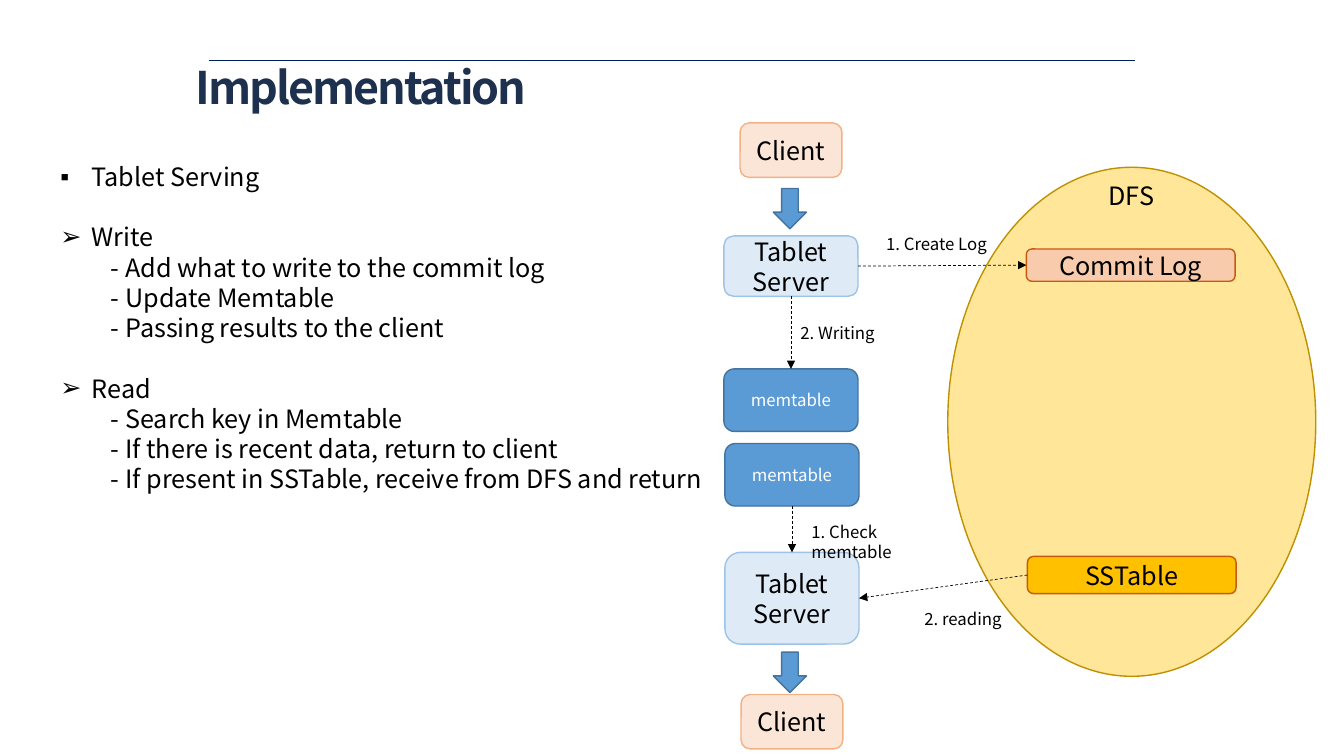
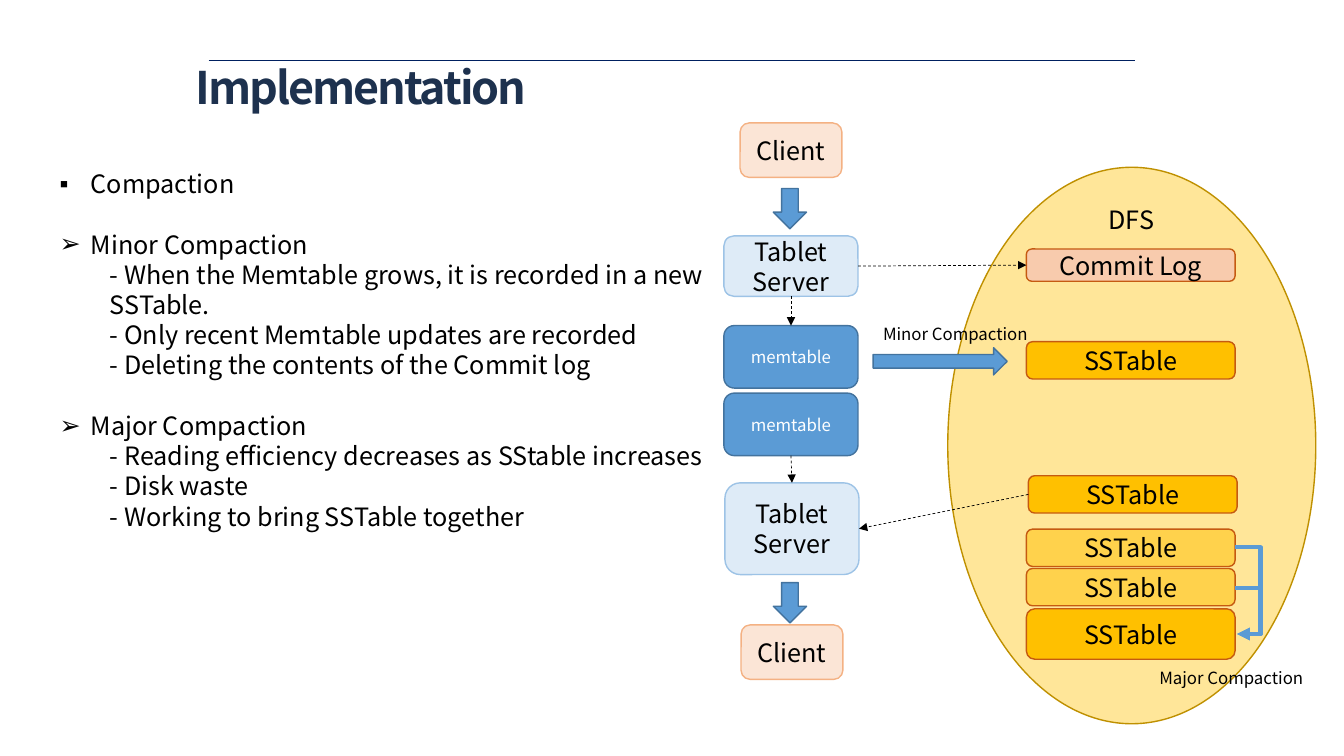
import dataclasses

import lxml.etree
import pptx
import pptx.dml.color
import pptx.enum.dml
import pptx.enum.shapes
import pptx.enum.text
import pptx.oxml.ns
import pptx.shapes.autoshape
import pptx.shapes.connector
import pptx.slide
import pptx.text.text
import pptx.util

Inches = pptx.util.Inches
RGBColor = pptx.dml.color.RGBColor
Shapes = pptx.enum.shapes.MSO_SHAPE
Connectors = pptx.enum.shapes.MSO_CONNECTOR
Align = pptx.enum.text.PP_ALIGN
Anchor = pptx.enum.text.MSO_ANCHOR

FONT = "Noto Sans CJK KR"
LINE_HEIGHT = 1.2
BLACK = RGBColor(0x00, 0x00, 0x00)
WHITE = RGBColor(0xFF, 0xFF, 0xFF)
NAVY = RGBColor(0x1D, 0x31, 0x4E)
RULE_BLUE = RGBColor(0x00, 0x20, 0x60)
BLUE = RGBColor(0x5B, 0x9B, 0xD5)
DARK_BLUE = RGBColor(0x43, 0x73, 0x9E)
PALE_BLUE = RGBColor(0xDE, 0xEB, 0xF7)
LIGHT_BLUE = RGBColor(0x9D, 0xC3, 0xE6)
PALE_ORANGE = RGBColor(0xFB, 0xE5, 0xD6)
LIGHT_ORANGE = RGBColor(0xF4, 0xB1, 0x83)
SALMON = RGBColor(0xF8, 0xCB, 0xAD)
RUST = RGBColor(0xC5, 0x5A, 0x11)
AMBER = RGBColor(0xFF, 0xC0, 0x00)
PALE_YELLOW = RGBColor(0xFF, 0xE6, 0x99)
OCHRE = RGBColor(0xBF, 0x90, 0x00)

TOP, LEFT, BOTTOM, RIGHT = range(4)  # connection sites of a box


@dataclasses.dataclass(frozen=True)
class Style:
    fill: RGBColor
    line: RGBColor
    text: str = ""
    text_color: RGBColor = BLACK
    size: float = 18
    opacity: int = 100
    shape: Shapes = Shapes.ROUNDED_RECTANGLE


CLIENT = Style(PALE_ORANGE, LIGHT_ORANGE, "Client")
SERVER = Style(PALE_BLUE, LIGHT_BLUE, "Tablet Server")
MEMTABLE = Style(BLUE, DARK_BLUE, "memtable", WHITE, 12)
COMMIT_LOG = Style(SALMON, RUST, "Commit Log")
SSTABLE = Style(AMBER, RUST, "SSTable")
OLD_SSTABLE = dataclasses.replace(SSTABLE, opacity=50)
FILE_SYSTEM = Style(PALE_YELLOW, OCHRE, shape=Shapes.OVAL)
DOWN_ARROW = Style(BLUE, DARK_BLUE, shape=Shapes.DOWN_ARROW)
RIGHT_ARROW = Style(BLUE, DARK_BLUE, shape=Shapes.RIGHT_ARROW)


@dataclasses.dataclass(frozen=True)
class Box:
    name: str
    style: Style
    left: float
    top: float
    width: float
    height: float


@dataclasses.dataclass(frozen=True)
class Link:
    """A dashed arrow between connection sites of two named boxes."""
    start: str
    start_site: int
    end: str
    end_site: int


@dataclasses.dataclass(frozen=True)
class Label:
    text: str
    left: float
    top: float
    width: float
    size: float = 12
    align: Align = Align.LEFT


@dataclasses.dataclass(frozen=True)
class Section:
    bullet: str
    heading: str
    items: tuple[str, ...] = ()


@dataclasses.dataclass(frozen=True)
class Page:
    body: tuple[float, float, float, float]
    sections: tuple[Section, ...]
    boxes: tuple[Box, ...]
    labels: tuple[Label, ...]
    elbow_tops: tuple[float, ...] = ()


LINKS = (
    Link("writer", RIGHT, "commit log", LEFT),
    Link("writer", BOTTOM, "written memtable", TOP),
    Link("read memtable", BOTTOM, "reader", TOP),
    Link("stored table", LEFT, "reader", RIGHT),
)
WRITE_PATH = (
    Box("writing client", CLIENT, 7.34, 1.22, 1.01, 0.54),
    Box("request", DOWN_ARROW, 7.67, 1.87, 0.33, 0.4),
    Box("writer", SERVER, 7.18, 2.34, 1.33, 0.6),
    Box("commit log", COMMIT_LOG, 10.18, 2.47, 2.07, 0.32),
)


def read_path(left: float, top: float) -> tuple[Box, ...]:
    """The reading server, its result arrow and the client below it."""
    return (
        Box("reader", SERVER, left, top, 1.33, 0.91),
        Box("result", DOWN_ARROW, left + 0.48, top + 0.99, 0.33, 0.4),
        Box("reading client", CLIENT, left + 0.16, top + 1.41, 1.01, 0.54),
    )


PAGES = (
    Page(
        (0.5, 1.55, 6.6, 4.34),
        (
            Section("▪", "Tablet Serving"),
            Section("➢", "Write", (
                "- Add what to write to the commit log",
                "- Update Memtable",
                "- Passing results to the client")),
            Section("➢", "Read", (
                "- Search key in Memtable",
                "- If there is recent data, return to client",
                "- If present in SSTable, receive from DFS and return")),
        ),
        (
            Box("file system", FILE_SYSTEM, 9.4, 1.66, 3.65, 5.05),
            *WRITE_PATH,
            Box("written memtable", MEMTABLE, 7.18, 3.66, 1.33, 0.62),
            Box("read memtable", MEMTABLE, 7.19, 4.4, 1.33, 0.62),
            *read_path(7.19, 5.48),
            Box("stored table", SSTABLE, 10.19, 5.52, 2.07, 0.37),
        ),
        (
            Label("DFS", 10.72, 1.74, 1, 18, Align.CENTER),
            Label("1. Create Log", 8.69, 2.27, 1.4),
            Label("2. Writing", 7.84, 3.15, 1.2),
            Label("1. Check memtable", 7.95, 5.13, 1.2),
            Label("2. reading", 9.07, 5.99, 1.2),
        ),
    ),
    Page(
        (0.49, 1.62, 7.1, 4.34),
        (
            Section("▪", "Compaction"),
            Section("➢", "Minor Compaction", (
                "- When the Memtable grows, it is recorded in a new SSTable.",
                "- Only recent Memtable updates are recorded",
                "- Deleting the contents of the Commit log")),
            Section("➢", "Major Compaction", (
                "- Reading efficiency decreases as SStable increases",
                "- Disk waste",
                "- Working to bring SSTable together")),
        ),
        (
            Box("file system", FILE_SYSTEM, 9.4, 1.66, 3.65, 5.52),
            *WRITE_PATH,
            Box("written memtable", MEMTABLE, 7.18, 3.23, 1.33, 0.62),
            Box("read memtable", MEMTABLE, 7.18, 3.9, 1.33, 0.62),
            *read_path(7.19, 4.79),
            Box("minor compaction", RIGHT_ARROW, 8.66, 3.45, 1.33, 0.27),
            Box("new table", SSTABLE, 10.18, 3.39, 2.07, 0.37),
            Box("stored table", SSTABLE, 10.2, 4.72, 2.07, 0.37),
            Box("first old table", OLD_SSTABLE, 10.18, 5.25, 2.07, 0.37),
            Box("second old table", OLD_SSTABLE, 10.18, 5.64, 2.07, 0.37),
            Box("merged table", SSTABLE, 10.18, 6.04, 2.07, 0.5),
        ),
        (
            Label("DFS", 10.72, 1.98, 1, 18, Align.CENTER),
            Label("Minor Compaction", 8.66, 3.16, 1.8),
            Label("Major Compaction", 11.4, 6.58, 1.8),
        ),
        (5.83, 5.43),
    ),
)


def add_child(parent: lxml.etree._Element, tag: str, **attributes: str) -> lxml.etree._Element:
    return lxml.etree.SubElement(parent, pptx.oxml.ns.qn(tag), attributes)


def place(shape: pptx.shapes.autoshape.Shape, left: float, top: float, width: float, height: float) -> None:
    shape.left, shape.top = Inches(left), Inches(top)
    shape.width, shape.height = Inches(width), Inches(height)


def write(paragraph: pptx.text.text._Paragraph, text: str, size: float,
          color: RGBColor = BLACK, align: Align = Align.LEFT) -> pptx.text.text._Run:
    paragraph.alignment = align
    paragraph.line_spacing = pptx.util.Pt(size * LINE_HEIGHT)
    run = paragraph.add_run()
    run.text = text
    run.font.name = FONT
    run.font.size = pptx.util.Pt(size)
    run.font.color.rgb = color
    return run


def add_line(slide: pptx.slide.Slide, kind: Connectors, start: tuple[float, float], end: tuple[float, float],
             color: RGBColor, width: float, arrow: bool = True) -> pptx.shapes.connector.Connector:
    connector = slide.shapes.add_connector(kind, *map(Inches, start + end))
    connector.line.color.rgb = color
    connector.line.width = pptx.util.Pt(width)
    if arrow:
        add_child(connector.line._get_or_add_ln(), "a:tailEnd", type="triangle")
    add_child(connector._element.spPr, "a:effectLst")
    return connector


def add_title(slide: pptx.slide.Slide, text: str) -> None:
    add_line(slide, Connectors.STRAIGHT, (2.07, 0.6), (11.26, 0.6), RULE_BLUE, 0.25, arrow=False)
    title = slide.shapes.title
    place(title, 1.94, 0.6, 9.28, 0.94)
    frame = title.text_frame
    frame.auto_size = pptx.enum.text.MSO_AUTO_SIZE.NONE
    frame.vertical_anchor = Anchor.TOP
    frame.margin_left = frame.margin_right = 0
    run = write(frame.paragraphs[0], text, 32, NAVY)
    run.font.bold = True
    run.font._element.set("spc", "-150")
    frame.paragraphs[0].line_spacing = pptx.util.Pt(32 * LINE_HEIGHT * 0.9)


def add_body(slide: pptx.slide.Slide, page: Page) -> None:
    body = slide.placeholders[1]
    place(body, *page.body)
    frame = body.text_frame
    frame.auto_size = pptx.enum.text.MSO_AUTO_SIZE.NONE
    frame.vertical_anchor = Anchor.TOP
    for section in page.sections:
        first = section is page.sections[0]
        for level, text in ((0, section.heading), *((1, item) for item in section.items)):
            paragraph = frame.paragraphs[0] if first else frame.add_paragraph()
            paragraph.level = level
            write(paragraph, text, 18)
            new_section = level == 0 and not first
            paragraph.space_before = pptx.util.Pt(18 * LINE_HEIGHT if new_section else 0)
            properties = paragraph._p.get_or_add_pPr()
            properties.set("marL", str(Inches(0.5 if level else 0.31)))
            properties.set("indent", str(Inches(0 if level else -0.31)))
            if level:
                add_child(properties, "a:buNone")
            else:
                add_child(properties, "a:buChar", char=section.bullet)


def add_box(slide: pptx.slide.Slide, box: Box) -> pptx.shapes.autoshape.Shape:
    style = box.style
    shape = slide.shapes.add_shape(style.shape, *map(Inches, (box.left, box.top, box.width, box.height)))
    shape.shadow.inherit = False
    shape.fill.solid()
    shape.fill.fore_color.rgb = style.fill
    if style.opacity < 100:
        color = shape._element.spPr.find(".//" + pptx.oxml.ns.qn("a:srgbClr"))
        add_child(color, "a:alpha", val=str(style.opacity * 1000))
    shape.line.color.rgb = style.line
    shape.line.width = pptx.util.Pt(1)
    if style.text:
        shape.text_frame.vertical_anchor = Anchor.MIDDLE
        write(shape.text_frame.paragraphs[0], style.text, style.size, style.text_color, Align.CENTER)
    return shape


def add_link(slide: pptx.slide.Slide, link: Link, shapes: dict[str, pptx.shapes.autoshape.Shape]) -> None:
    connector = add_line(slide, Connectors.STRAIGHT, (0, 0), (1, 1), BLACK, 0.5)
    connector.line.dash_style = pptx.enum.dml.MSO_LINE.DASH
    connector.begin_connect(shapes[link.start], link.start_site)
    connector.end_connect(shapes[link.end], link.end_site)


def add_elbow(slide: pptx.slide.Slide, top: float) -> None:
    """An arrow that leaves an old table, turns at 12.5 inches and returns to the merged one."""
    start, end, turn = 12.25, 12.27, 12.5
    connector = add_line(slide, Connectors.ELBOW, (start, top), (end, 6.29), BLUE, 3)
    guides = connector._element.spPr.find(".//" + pptx.oxml.ns.qn("a:avLst"))
    ratio = round((turn - start) / (end - start) * 100000)
    add_child(guides, "a:gd", name="adj1", fmla=f"val {ratio}")


def add_label(slide: pptx.slide.Slide, label: Label) -> None:
    box = slide.shapes.add_textbox(*map(Inches, (label.left, label.top, label.width, 0.3)))
    box.text_frame.word_wrap = True
    write(box.text_frame.paragraphs[0], label.text, label.size, align=label.align)


def main() -> None:
    presentation = pptx.Presentation()
    presentation.slide_width, presentation.slide_height = Inches(13.33), Inches(7.5)
    for page in PAGES:
        slide = presentation.slides.add_slide(presentation.slide_layouts[1])
        add_title(slide, "Implementation")
        add_body(slide, page)
        shapes = {box.name: add_box(slide, box) for box in page.boxes}
        for link in LINKS:
            add_link(slide, link, shapes)
        for top in page.elbow_tops:
            add_elbow(slide, top)
        for label in page.labels:
            add_label(slide, label)
    presentation.save("out.pptx")


if __name__ == "__main__":
    main()
